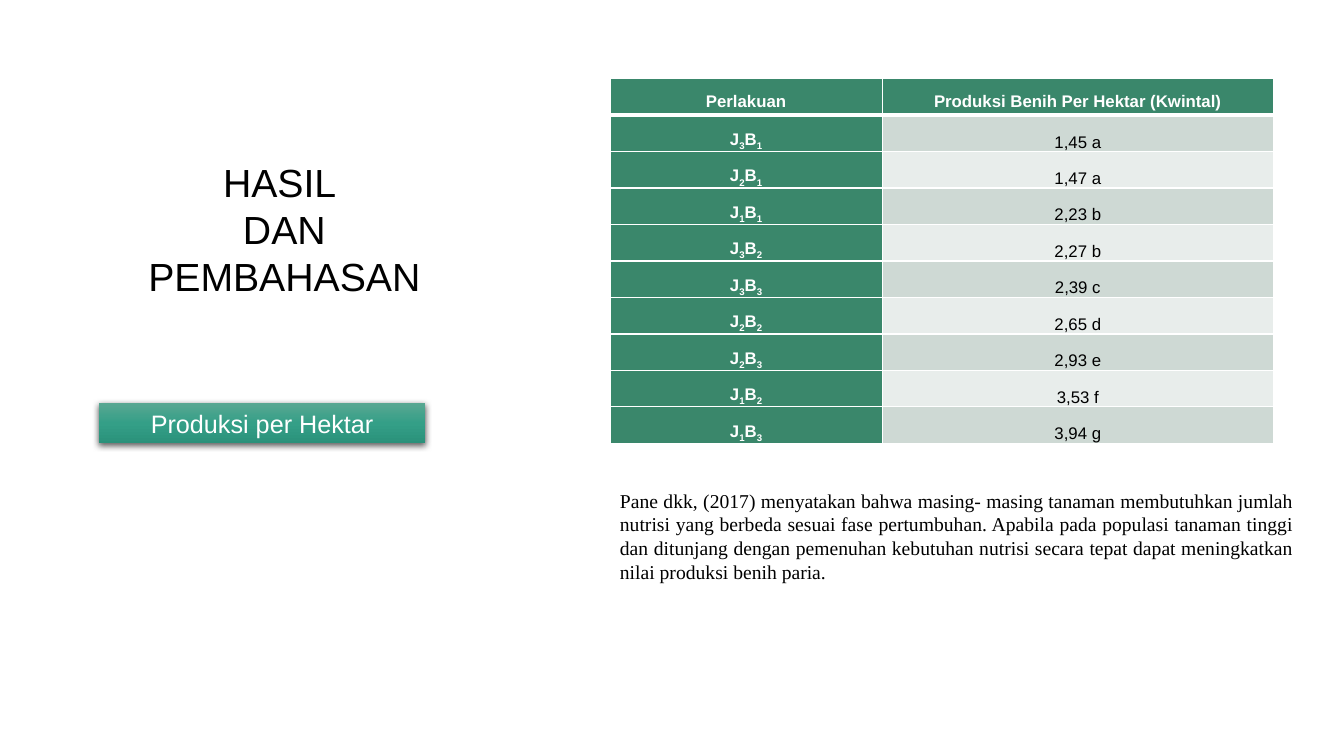
from copy import deepcopy

from pptx import Presentation
from pptx.dml.color import RGBColor
from pptx.enum.shapes import MSO_SHAPE as Shape
from pptx.enum.text import MSO_ANCHOR as Anchor, MSO_AUTO_SIZE as AutoSize, PP_ALIGN as Align
from pptx.oxml import parse_xml
from pptx.oxml.ns import nsdecls, qn
from pptx.util import Inches, Pt

GREEN, WHITE, BLACK = "3A876B", "FFFFFF", "000000"
BANDS = ["CED9D4", "E8EDEB"]
BADGE_STOPS = [(0, "59A792"), (0.5, "349F87"), (1, "2A917A")]
HEADINGS = ["Perlakuan", "Produksi Benih Per Hektar (Kwintal)"]
YIELDS = [
    ("J3B1", "1,45 a"), ("J2B1", "1,47 a"), ("J1B1", "2,23 b"),
    ("J3B2", "2,27 b"), ("J3B3", "2,39 c"), ("J2B2", "2,65 d"),
    ("J2B3", "2,93 e"), ("J1B2", "3,53 f"), ("J1B3", "3,94 g"),
]
DISCUSSION = (
    "Pane dkk, (2017) menyatakan bahwa masing- masing tanaman membutuhkan jumlah "
    "nutrisi yang berbeda sesuai fase pertumbuhan. Apabila pada populasi tanaman tinggi "
    "dan ditunjang dengan pemenuhan kebutuhan nutrisi secara tepat dapat meningkatkan "
    "nilai produksi benih paria."
)


def rgb(value):
    return RGBColor.from_string(value)


def format_span(span, size, color, font="Arial", bold=False):
    span.font.size = Pt(size)
    span.font.name = font
    span.font.bold = bold
    span.font.color.rgb = rgb(color)


def fill_text(shape, lines, size, color, align=Align.CENTER, font="Arial", anchor=Anchor.TOP):
    frame = shape.text_frame
    frame.text = "\n".join(lines)
    frame.word_wrap = True
    frame.auto_size = AutoSize.SHAPE_TO_FIT_TEXT
    frame.vertical_anchor = anchor
    for para in frame.paragraphs:
        para.alignment = align
        for span in para.runs:
            format_span(span, size, color, font)


def place_title(page, box):
    title = page.shapes.title
    title.left, title.top, title.width, title.height = map(Inches, box)
    fill_text(title, ["HASIL ", "DAN", "PEMBAHASAN"], 28, BLACK)


def add_badge(page, box):
    badge = page.shapes.add_shape(Shape.RECTANGLE, *map(Inches, box))
    badge.line.fill.background()
    badge.fill.gradient()
    badge.fill.gradient_angle = 270
    properties = badge._element.spPr
    stop_list = properties.find(".//" + qn("a:gsLst"))
    stop_list.insert(1, deepcopy(stop_list[0]))
    for stop, (position, color) in zip(badge.fill.gradient_stops, BADGE_STOPS):
        stop.position = position
        stop.color.rgb = rgb(color)
    badge.shadow.inherit = False
    properties.find(qn("a:effectLst")).append(parse_xml(
        f'<a:outerShdw {nsdecls("a")} blurRad="{Pt(4.5)}" dist="{Pt(1.5)}" dir="5400000" '
        f'rotWithShape="0"><a:srgbClr val="{BLACK}"><a:alpha val="63000"/></a:srgbClr></a:outerShdw>'
    ))
    fill_text(badge, ["Produksi per Hektar"], 18, WHITE, anchor=Anchor.MIDDLE)


def add_discussion(page, box):
    note = page.shapes.add_textbox(*map(Inches, box))
    fill_text(note, [DISCUSSION], 14, BLACK, Align.JUSTIFY, "Times New Roman")


def set_borders(cell, top, bottom):
    properties = cell._tc.get_or_add_tcPr()
    for side, width in (("L", 1), ("R", 1), ("T", top), ("B", bottom)):
        properties.append(parse_xml(
            f'<a:ln{side} {nsdecls("a")} w="{Pt(width)}"><a:solidFill>'
            f'<a:srgbClr val="{WHITE}"/></a:solidFill></a:ln{side}>'
        ))


def fill_cell(cell, pieces, row, column):
    heading = row == 0
    green = heading or column == 0
    set_borders(cell, 3 if row == 1 else 1, 3 if heading else 1)
    cell.fill.solid()
    cell.fill.fore_color.rgb = rgb(GREEN if green else BANDS[(row - 1) % 2])
    cell.margin_left = cell.margin_right = Inches(0.07)
    cell.margin_top = cell.margin_bottom = 0
    cell.vertical_anchor = Anchor.MIDDLE if heading else Anchor.BOTTOM
    para = cell.text_frame.paragraphs[0]
    para.alignment = Align.CENTER
    para.line_spacing = 1.5
    for piece in pieces:
        span = para.add_run()
        span.text = piece
        format_span(span, 12, WHITE if green else BLACK, bold=green)
        if piece.isdigit():
            span._r.get_or_add_rPr().set("baseline", "-25000")


def add_yield_table(page, box):
    rows = [HEADINGS, *YIELDS]
    table = page.shapes.add_table(len(rows), 2, *map(Inches, box)).table
    for column, width in zip(table.columns, (2.7, box[2] - 2.7)):
        column.width = Inches(width)
    for row, texts in enumerate(rows):
        table.rows[row].height = Inches(box[3] / len(rows))
        for column, text in enumerate(texts):
            pieces = list(text) if row and column == 0 else [text]
            fill_cell(table.cell(row, column), pieces, row, column)


def main():
    deck = Presentation()
    deck.slide_width, deck.slide_height = Inches(13.33), Inches(7.5)
    page = deck.slides.add_slide(deck.slide_layouts[5])
    add_badge(page, (0.98, 4, 3.24, 0.4))
    place_title(page, (1.21, 1.52, 3.22, 1.51))
    add_discussion(page, (6.05, 4.8, 6.88, 1.35))
    add_yield_table(page, (6.05, 0.78, 6.58, 3.62))
    deck.save("out.pptx")


if __name__ == "__main__":
    main()
